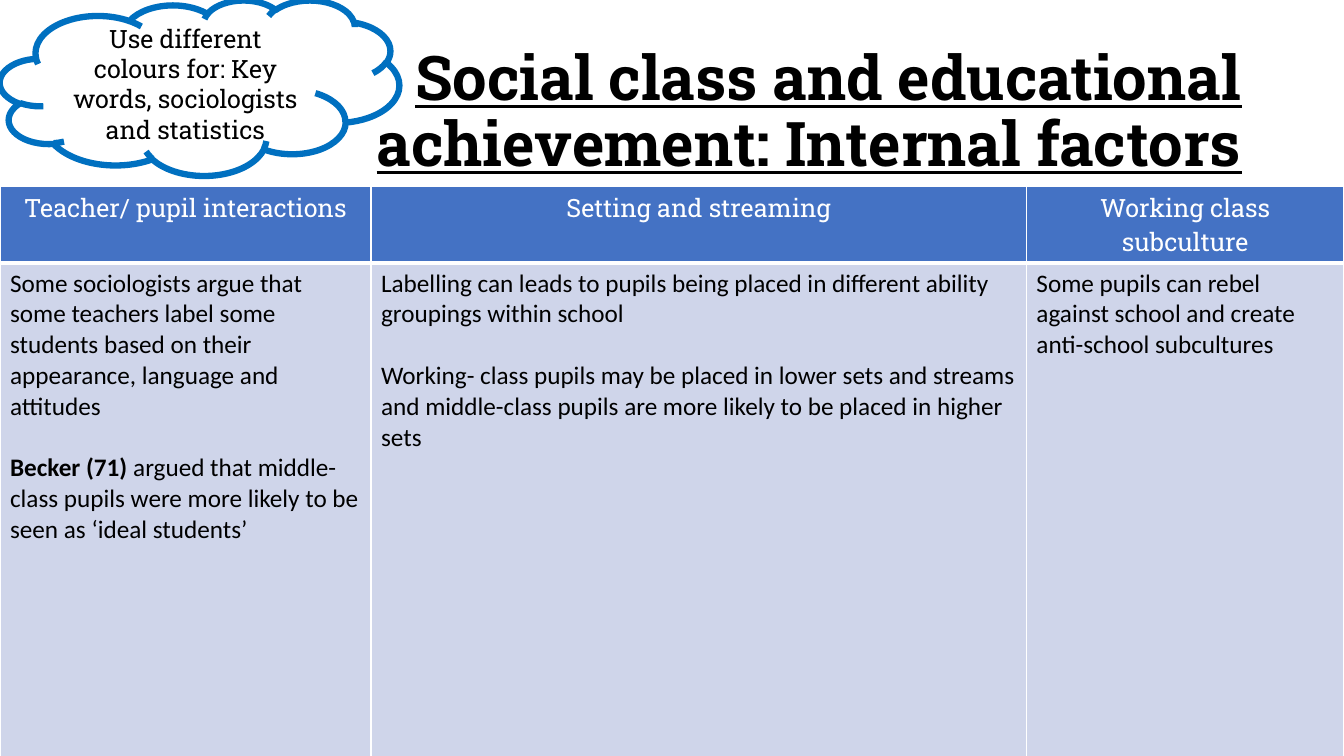
import pptx
import pptx.util
import pptx.dml.color
import pptx.enum.shapes
import pptx.enum.text
import pptx.oxml
import pptx.oxml.ns
from pptx.util import Inches

COLORS = {"white": "FFFFFF", "black": "000000", "head": "4472C4",
          "body": "CFD5EA", "cloud": "0070C0"}
SLAB, SANS = "Roboto Slab", "Calibri"
ALIGN = pptx.enum.text.PP_ALIGN
MIDDLE = pptx.enum.text.MSO_ANCHOR.MIDDLE

WIDTHS = [3.68, 6.5, 3.15]
HEIGHTS = [0.72, 4.93]
HEADS = ["Teacher/ pupil interactions", "Setting and streaming",
         "Working class subculture"]
# Each column holds paragraphs; each paragraph holds (text, bold) runs
NOTES = [
    [[("Some sociologists argue that some teachers label some students based "
       "on their appearance, language and attitudes", False)],
     [("Becker (71) ", True),
      ("argued that middle- class pupils were more likely to be seen as "
       "‘ideal students’", False)]],
    [[("Labelling can leads to pupils being placed in different ability "
       "groupings within school", False)],
     [("Working- class pupils may be placed in lower sets and streams and "
       "middle-class pupils are more likely to be placed in higher sets",
       False)]],
    [[("Some pupils can rebel against school and create anti-school "
       "subcultures", False)]],
]


def rgb(name):
    return pptx.dml.color.RGBColor.from_string(COLORS[name])


def style(para, face, size, color, align):
    para.alignment = align
    para.font.name = face
    para.font.size = pptx.util.Pt(size)
    para.font.color.rgb = rgb(color)


def paint(item, color):
    item.fill.solid()
    item.fill.fore_color.rgb = rgb(color)


def edge(cell, sides):
    """Draw white cell borders; sides maps a tag to a width in points."""
    props = cell._tc.get_or_add_tcPr()
    space = pptx.oxml.ns.nsdecls("a")
    for spot, (tag, width) in enumerate(sides.items()):
        props.insert(spot, pptx.oxml.parse_xml(
            f'<a:{tag} {space} w="{pptx.util.Pt(width)}"><a:solidFill>'
            f'<a:srgbClr val="{COLORS["white"]}"/></a:solidFill></a:{tag}>'))


def add_title(slide, text):
    title = slide.shapes.title
    title.left, title.top = Inches(0.92), Inches(0.4)
    title.width, title.height = Inches(11.5), Inches(1.45)
    frame = title.text_frame
    frame.text = text
    frame.word_wrap = True
    frame.auto_size = pptx.enum.text.MSO_AUTO_SIZE.NONE
    frame.vertical_anchor = MIDDLE
    para = frame.paragraphs[0]
    style(para, SLAB, 44, "black", ALIGN.RIGHT)
    para.line_spacing = 0.9
    para.font.bold = True
    para.font.underline = True


def fill_head(cell, text):
    paint(cell, "head")
    edge(cell, {"lnL": 1, "lnR": 1, "lnT": 1, "lnB": 3})
    cell.text = text
    para = cell.text_frame.paragraphs[0]
    style(para, SLAB, 18, "white", ALIGN.CENTER)
    para.font.bold = False
    para.runs[0].font.bold = False


def fill_note(cell, paras):
    paint(cell, "body")
    edge(cell, {"lnL": 1, "lnR": 1, "lnT": 3, "lnB": 1})
    frame = cell.text_frame
    for num, runs in enumerate(paras):
        para = frame.add_paragraph() if num else frame.paragraphs[0]
        if num:
            para.space_before = pptx.util.Pt(22)
        for text, bold in runs:
            run = para.add_run()
            run.text = text
            run.font.bold = bold
        style(para, SANS, 18, "black", ALIGN.LEFT)


def add_grid(slide):
    grid = slide.shapes.add_table(
        2, len(HEADS), Inches(0), Inches(1.85),
        Inches(sum(WIDTHS)), Inches(sum(HEIGHTS))).table
    for row, height in zip(grid.rows, HEIGHTS):
        row.height = Inches(height)
    for col, width in enumerate(WIDTHS):
        grid.columns[col].width = Inches(width)
        fill_head(grid.cell(0, col), HEADS[col])
        fill_note(grid.cell(1, col), NOTES[col])


def add_cloud(slide, text):
    cloud = slide.shapes.add_shape(
        pptx.enum.shapes.MSO_SHAPE.CLOUD,
        Inches(0), Inches(0), Inches(3.96), Inches(1.74))
    cloud.shadow.inherit = False
    paint(cloud, "white")
    cloud.line.color.rgb = rgb("cloud")
    cloud.line.width = pptx.util.Pt(4.5)
    frame = cloud.text_frame
    frame.word_wrap = True
    frame.vertical_anchor = MIDDLE
    frame.text = text
    style(frame.paragraphs[0], SLAB, 18, "black", ALIGN.CENTER)


def main():
    deck = pptx.Presentation()
    deck.slide_width, deck.slide_height = Inches(13.33), Inches(7.5)
    slide = deck.slides.add_slide(deck.slide_layouts.get_by_name("Title Only"))

    # Heading
    add_title(slide, "Social class and educational achievement: "
                     "Internal factors")
    # Factors table
    add_grid(slide)
    # Task reminder
    add_cloud(slide, "Use different colours for: Key words, sociologists "
                     "and statistics")
    deck.save("out.pptx")


if __name__ == "__main__":
    main()
